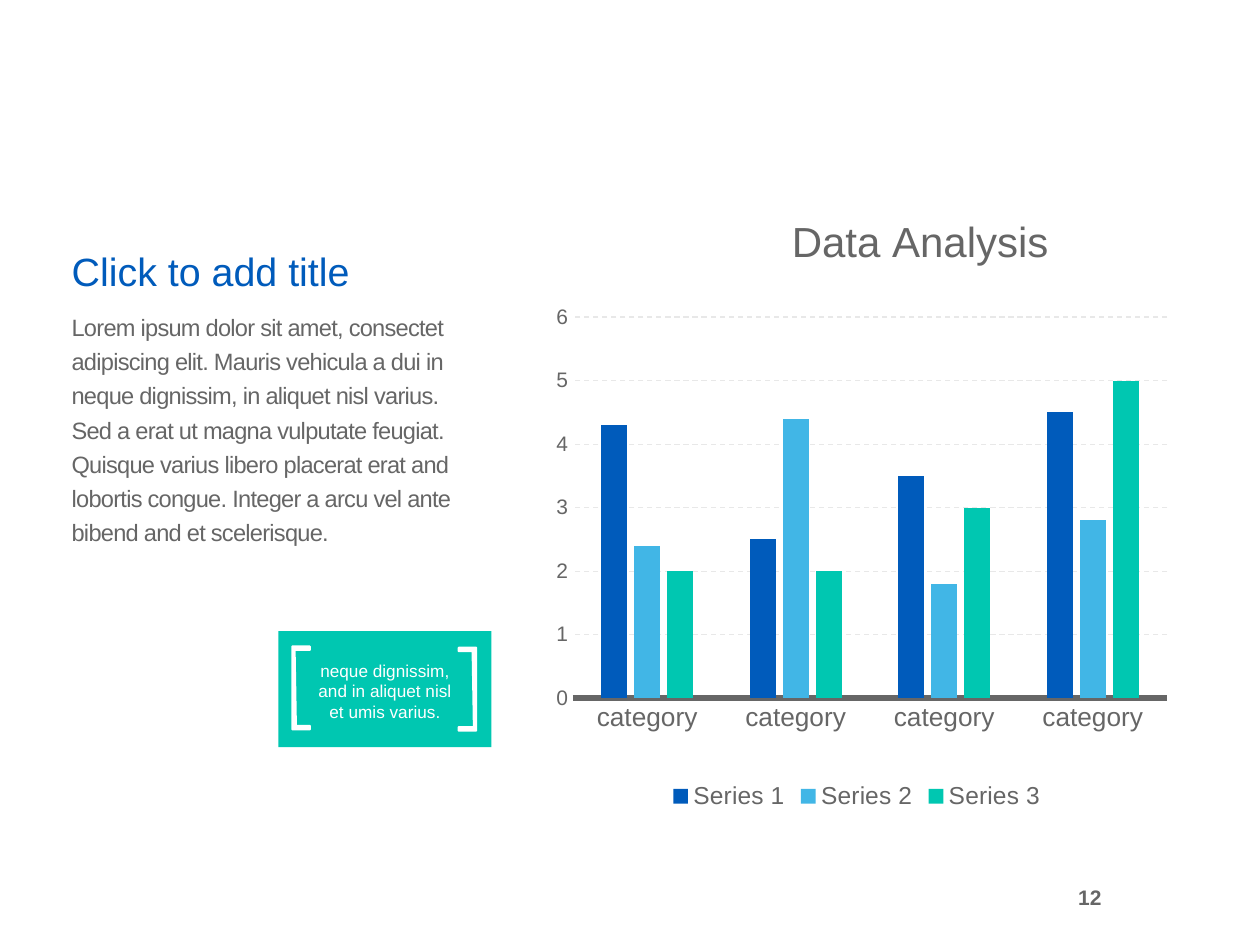
from dataclasses import dataclass, field

from lxml import etree
from pptx import Presentation
from pptx import util as u
from pptx.chart.data import CategoryChartData
from pptx.dml.color import RGBColor
from pptx.enum import chart as ec, dml, shapes, text
from pptx.oxml import parse_xml
from pptx.oxml.ns import nsdecls, qn

PX = 9144  # 100 px to the inch
FONT = "Arial"
HUES = {"blue": "005BBB", "sky": "41B6E6", "teal": "00C7B1",
        "gray": "666666", "pale": "E8E8E8", "white": "FFFFFF"}


@dataclass
class Box:
    x: int
    y: int
    w: int
    h: int

    def emu(self) -> list[int]:
        return [n * PX for n in (self.x, self.y, self.w, self.h)]


@dataclass
class Label:
    box: Box
    words: str
    size: float
    hue: str
    anchor: str = "TOP"
    para: dict = field(default_factory=dict)
    bold: bool = False
    track: int = 0


@dataclass
class Bracket:
    x: int
    y: int
    sign: int  # 1 opens right, -1 is turned half round


LABELS = [
    Label(Box(825, 683, 59, 58), "12", 12, "gray", "MIDDLE",
          {"alignment": text.PP_ALIGN.RIGHT}, True),
    Label(Box(47, 239, 328, 303),
          "Lorem ipsum dolor sit amet, consectet adipiscing elit. Mauris "
          "vehicula a dui in neque dignissim, in aliquet nisl varius. Sed a "
          "erat ut magna vulputate feugiat. Quisque varius libero placerat "
          "erat and lobortis congue. Integer a arcu vel ante bibend and et "
          "scelerisque.", 13.5, "gray",
          para={"line_spacing": u.Pt(19.5)}, track=-40),
    Label(Box(47, 144, 372, 95), "Click to add title", 22.5, "blue", "BOTTOM",
          {"line_spacing": 0.9}),
]
QUOTE = Label(Box(241, 519, 129, 59),
              "neque dignissim, and in aliquet nisl\vet umis varius.",
              9.8, "white", para={"alignment": text.PP_ALIGN.CENTER})
BRACKETS = [Bracket(232, 513, 1), Bracket(378, 580, -1)]
ARMS = [(14, 0), (0, 0), (0, 66), (14, 66), (14, 63), (3, 63), (2, 3), (14, 3)]
SERIES = [("Series 1", (4.3, 2.5, 3.5, 4.5), "blue"),
          ("Series 2", (2.4, 4.4, 1.8, 2.8), "sky"),
          ("Series 3", (2, 2, 3, 5), "teal")]


def rgb(hue: str) -> RGBColor:
    return RGBColor.from_string(HUES[hue])


def apply(item, values: dict) -> None:
    for name, value in values.items():
        setattr(item, name, value)


def style(font, size: float, hue: str, bold: bool = False) -> None:
    apply(font, {"name": FONT, "size": u.Pt(size), "bold": bold})
    font.color.rgb = rgb(hue)


def paint(shape, hue: str) -> None:
    shape.shadow.inherit = False
    shape.fill.solid()
    shape.fill.fore_color.rgb = rgb(hue)


def write(slide, label: Label) -> None:
    frame = slide.shapes.add_textbox(*label.box.emu()).text_frame
    apply(frame, {"word_wrap": True, "text": label.words,
                  "vertical_anchor": text.MSO_ANCHOR[label.anchor]})
    para = frame.paragraphs[0]
    apply(para, label.para)
    for run in para.runs:
        style(run.font, label.size, label.hue, label.bold)
        if label.track:
            run.font._element.set("spc", str(label.track))


def bracket(slide, mark: Bracket) -> None:
    spots = [(mark.x + mark.sign * x, mark.y + mark.sign * y) for x, y in ARMS]
    pen = slide.shapes.build_freeform(*spots[0], scale=PX)
    pen.add_line_segments(spots[1:], close=True)
    shape = pen.convert_to_shape()
    paint(shape, "white")
    shape.line.color.rgb = rgb("white")
    shape.line.width = u.Pt(1)


def place(item, spots: dict) -> None:
    """Give a chart part a manual layout."""
    tags = "".join(f'<c:{k} val="{v}"/>' for k, v in spots.items())
    node = parse_xml(f'<c:layout {nsdecls("c")}><c:manualLayout>{tags}'
                     '</c:manualLayout></c:layout>')
    for old in item.findall(qn("c:layout")):
        item.remove(old)
    text_part = item.find(qn("c:tx"))
    item.insert(0 if text_part is None else 1, node)


def draw_chart(slide, box: Box) -> None:
    data = CategoryChartData()
    data.categories = ["category"] * 4
    for name, vals, _ in SERIES:
        data.add_series(name, vals)
    chart = slide.shapes.add_chart(
        ec.XL_CHART_TYPE.COLUMN_CLUSTERED, *box.emu(), data).chart
    style(chart.font, 10, "gray")

    # Title and legend
    chart.has_title = True
    head = chart.chart_title
    head.text_frame.text = "Data Analysis"
    style(head.text_frame.paragraphs[0].runs[0].font, 24, "gray")
    edge = {"xMode": "edge", "yMode": "edge"}
    place(head._element, {**edge, "x": 0.39, "y": 0.01})
    chart.has_legend = True
    apply(chart.legend, {"position": ec.XL_LEGEND_POSITION.BOTTOM,
                         "include_in_layout": False})
    style(chart.legend.font, 14, "gray")

    # Columns
    plot = chart.plots[0]
    apply(plot, {"gap_width": 219, "overlap": -27, "vary_by_categories": False})
    for col, (_, _, hue) in zip(plot.series, SERIES):
        col.format.fill.solid()
        col.format.fill.fore_color.rgb = rgb(hue)
    area = chart._chartSpace.chart.plotArea
    place(area, {"layoutTarget": "inner", **edge,
                 "x": 0.07, "y": 0.19, "w": 0.9, "h": 0.62})

    # Axes
    cat, val = chart.category_axis, chart.value_axis
    for axis, size in ((cat, 15), (val, 12)):
        apply(axis, {"major_tick_mark": ec.XL_TICK_MARK.NONE,
                     "minor_tick_mark": ec.XL_TICK_MARK.NONE})
        style(axis.tick_labels.font, size, "gray")
    cat.format.line.color.rgb = rgb("gray")
    cat.format.line.width = u.Pt(3.25)
    apply(val, {"minimum_scale": 0, "maximum_scale": 6, "major_unit": 1})
    val.format.line.fill.background()
    grid = val.major_gridlines.format.line
    grid.color.rgb = rgb("pale")
    apply(grid, {"width": u.Pt(0.75), "dash_style": dml.MSO_LINE.DASH})


def main() -> None:
    deck = Presentation()
    apply(deck, {"slide_width": 1000 * PX, "slide_height": 750 * PX})
    slide = deck.slides.add_slide(deck.slide_layouts[6])
    draw_chart(slide, Box(418, 159, 524, 488))
    for label in LABELS:
        write(slide, label)

    # Quote card
    card = slide.shapes.add_shape(
        shapes.MSO_SHAPE.RECTANGLE, *Box(221, 501, 169, 92).emu())
    paint(card, "teal")
    card.line.fill.background()
    for mark in BRACKETS:
        bracket(slide, mark)
    write(slide, QUOTE)
    deck.save("out.pptx")


if __name__ == "__main__":
    main()
